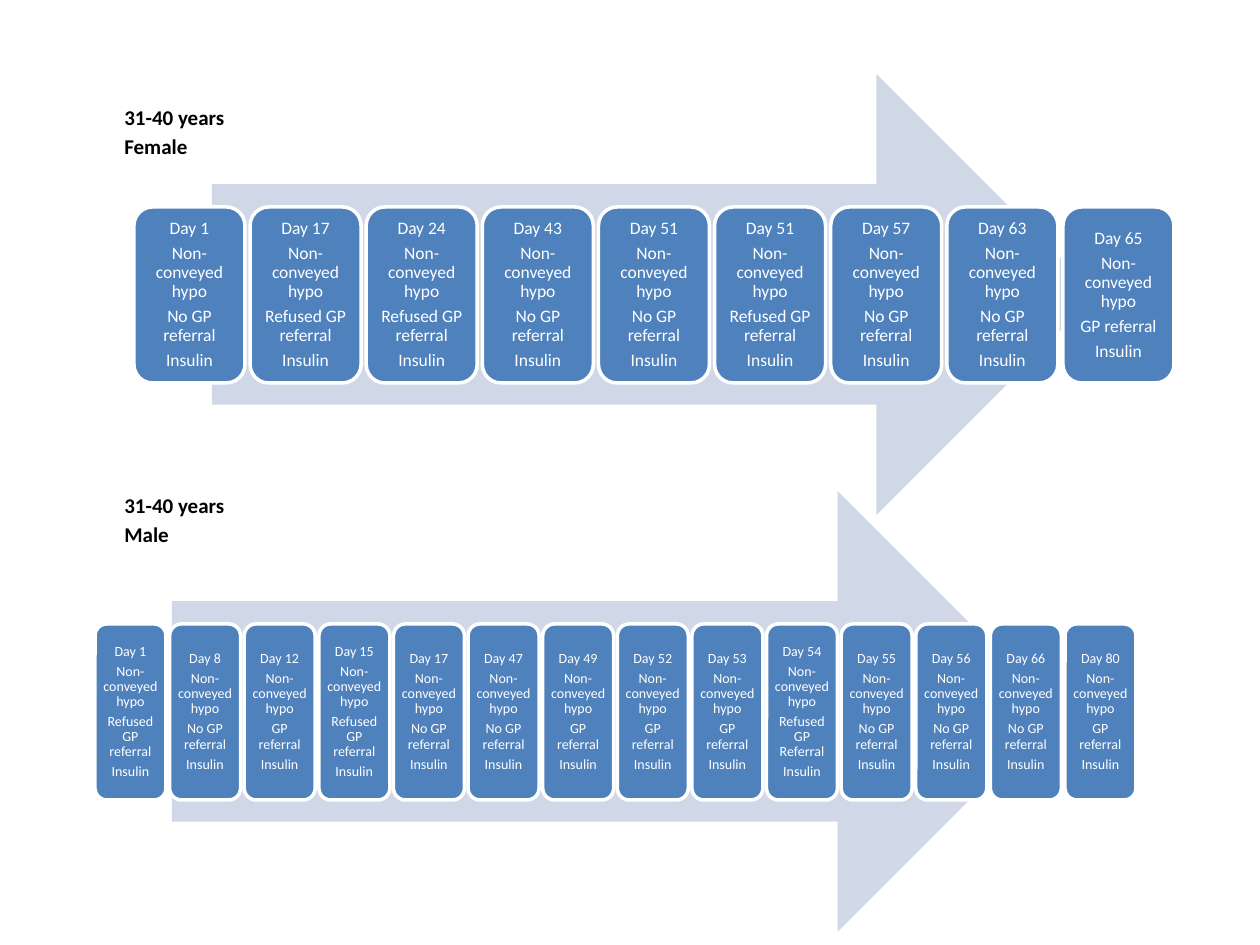
import pptx
import pptx.dml.color
import pptx.enum.shapes
import pptx.enum.text
import pptx.util

PX = 914400 / 126
NO, YES, REFUSED = "No GP referral", "GP referral", "Refused GP referral"
FEMALE = [(1, NO), (17, REFUSED), (24, REFUSED), (43, NO), (51, NO),
          (51, REFUSED), (57, NO), (63, NO), (65, YES)]
MALE = [(1, REFUSED), (8, NO), (12, YES), (15, REFUSED), (17, NO),
        (47, NO), (49, YES), (52, YES), (53, YES), (54, "Refused GP Referral"),
        (55, NO), (56, NO), (66, NO), (80, YES)]


def px(n):
    """Turn pixels into EMU."""
    return pptx.util.Emu(round(n * PX))


def color(value):
    """Turn a hex string into a colour."""
    return pptx.dml.color.RGBColor.from_string(value)


def add_lines(tf, lines, size, fill, spacing, bold=False, align=None, after=0):
    """Write each line as one paragraph of a text frame."""
    tf.word_wrap = True
    for i, line in enumerate(lines):
        p = tf.add_paragraph() if i else tf.paragraphs[0]
        p.alignment = align
        p.line_spacing = spacing
        p.space_after = pptx.util.Pt(after)
        r = p.add_run()
        r.text = line
        r.font.name = "Calibri"
        r.font.size = pptx.util.Pt(size)
        r.font.bold = bold
        r.font.color.rgb = color(fill)


def add_heading(s, top, lines):
    """Add the bold label of a patient."""
    sp = s.shapes.add_textbox(px(112), px(top), px(316), px(66))
    sp.fill.solid()
    sp.fill.fore_color.rgb = color("FFFFFF")
    add_lines(sp.text_frame, lines, 12, "000000", 1.15, bold=True)
    sp.text_frame.auto_size = pptx.enum.text.MSO_AUTO_SIZE.SHAPE_TO_FIT_TEXT


def add_filled(s, kind, box, fill):
    """Add a flat preset shape without an outline."""
    sp = s.shapes.add_shape(kind, *map(px, box))
    sp.shadow.inherit = False
    sp.fill.solid()
    sp.fill.fore_color.rgb = color(fill)
    sp.line.fill.background()
    return sp


def add_card(s, box, lines, size, inset):
    """Add one event card with its centred text."""
    sp = add_filled(s, pptx.enum.shapes.MSO_SHAPE.ROUNDED_RECTANGLE, box, "4F81BD")
    sp.line.color.rgb = color("FFFFFF")
    sp.line.width = pptx.util.Pt(2)
    tf = sp.text_frame
    tf.margin_left = tf.margin_right = tf.margin_top = tf.margin_bottom = px(inset)
    tf.vertical_anchor = pptx.enum.text.MSO_ANCHOR.MIDDLE
    add_lines(tf, lines, size, "FFFFFF", 0.9,
              align=pptx.enum.text.PP_ALIGN.CENTER, after=round(size * 0.35, 2))


def add_timeline(s, arrow, events, first, last, width, size, inset):
    """Add an arrow and spread the event cards evenly along it."""
    add_filled(s, pptx.enum.shapes.MSO_SHAPE.RIGHT_ARROW, arrow, "D0D8E8")
    height = 176
    top = arrow[1] + (arrow[3] - height) // 2 + 1
    step = (last - first) / (len(events) - 1)
    for i, (day, referral) in enumerate(events):
        lines = [f"Day {day}", "Non-conveyed hypo", referral, "Insulin"]
        add_card(s, (first + i * step, top, width, height), lines, size, inset)


def main():
    """Build the slide and save it."""
    prs = pptx.Presentation()
    prs.slide_width, prs.slide_height = px(1260), px(945)
    s = prs.slides.add_slide(prs.slide_layouts[6])
    add_heading(s, 483, ["31-40 years", "Male"])
    add_timeline(s, (212, 74, 885, 441), FEMALE, 134, 1063, 111, 10, 5)
    add_heading(s, 95, ["31-40 years", "Female"])
    add_timeline(s, (172, 491, 886, 441), MALE, 95, 1065, 71, 8, 4)
    prs.save("out.pptx")


if __name__ == "__main__":
    main()
